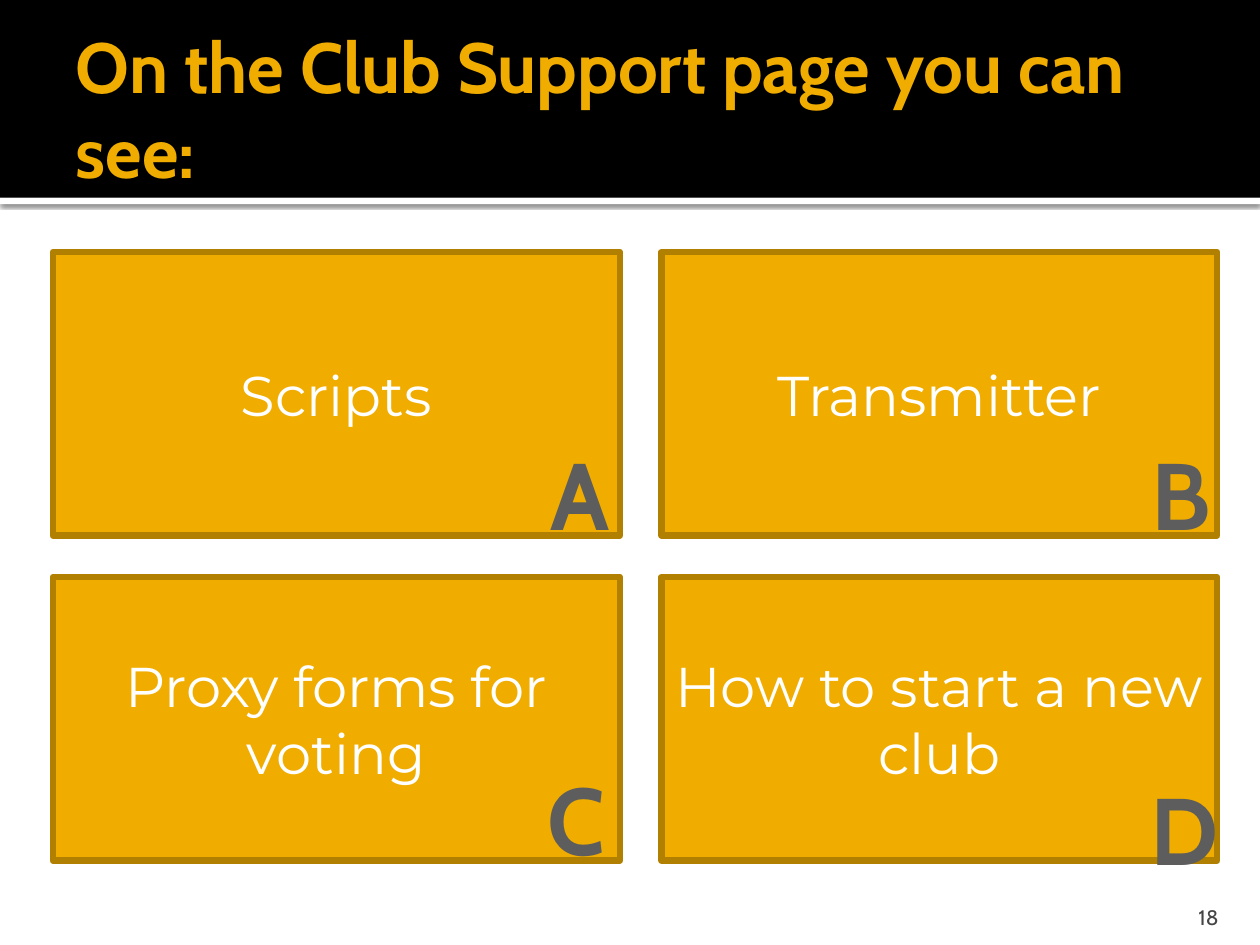
from pptx import Presentation
from pptx.dml.color import RGBColor
from pptx.enum import shapes, text
from pptx.oxml import parse_xml
from pptx.oxml.ns import nsdecls, qn
from pptx.util import Pt

BLACK = RGBColor(0x00, 0x00, 0x00)
WHITE = RGBColor(0xFF, 0xFF, 0xFF)
GOLD = RGBColor(0xF0, 0xAD, 0x00)
DARK_GOLD = RGBColor(0xB2, 0x80, 0x00)
LETTER_GREY = RGBColor(0x5D, 0x5D, 0x5D)
NUMBER_GREY = RGBColor(0x45, 0x45, 0x45)
HEADING_FONT = "Cabin"
BODY_FONT = "Montserrat"
SLIDE_WIDTH, SLIDE_HEIGHT = 720, 540

COLUMNS = ((30.24, 324), (378, 317.5))
ROWS = (144, 329.76)
CARD_HEIGHT = 162
ANSWERS = (
    ("Scripts", "A", 275.76, 101.5, 50.4),
    ("Transmitter", "B", 272.88, 101.5, 48.24),
    ("Proxy forms for voting", "C", 275.76, 101.5, 46.08),
    ("How to start a new club", "D", 272.16, 107.28, 51.84),
)


def add_run(paragraph, words, font, size, color, bold=False):
    run = paragraph.add_run()
    run.text = words
    run.font.name = font
    run.font.size = Pt(size)
    run.font.color.rgb = color
    run.font.bold = bold


def add_rectangle(slide, left, top, width, height, fill):
    rectangle = slide.shapes.add_shape(
        shapes.MSO_SHAPE.RECTANGLE, Pt(left), Pt(top), Pt(width), Pt(height))
    rectangle.shadow.inherit = False
    rectangle.fill.solid()
    rectangle.fill.fore_color.rgb = fill
    rectangle.line.fill.background()
    return rectangle


def add_header(slide, left, top, width, height):
    rule = add_rectangle(slide, left, top + height, width, 3.6, WHITE)
    rule._element.spPr.find(qn("a:effectLst")).append(parse_xml(
        f'<a:outerShdw {nsdecls("a")} blurRad="31750" dist="10160" dir="5400000"'
        ' algn="tl" rotWithShape="0"><a:srgbClr val="000000">'
        '<a:alpha val="60000"/></a:srgbClr></a:outerShdw>'))
    add_rectangle(slide, left, top, width, height, BLACK)

    title = slide.shapes.title
    title._element.getparent().append(title._element)
    title.left, title.top = Pt(left + 36), Pt(top + 12.24)
    title.width, title.height = Pt(width - 72), Pt(98.64)
    frame = title.text_frame
    frame.word_wrap = True
    frame.auto_size = text.MSO_AUTO_SIZE.NONE
    frame.vertical_anchor = text.MSO_ANCHOR.MIDDLE
    frame.margin_left = Pt(7.2)
    frame.margin_right = frame.margin_top = frame.margin_bottom = Pt(3.6)
    heading = frame.paragraphs[0]
    heading.alignment = text.PP_ALIGN.LEFT
    add_run(heading, "On the Club Support page you can see:",
            HEADING_FONT, 40.5, GOLD, True)


def add_card(slide, left, top, width, height, answer):
    card = add_rectangle(slide, left, top, width, height, GOLD)
    card.line.color.rgb = DARK_GOLD
    card.line.width = Pt(3.78)
    card.text_frame.word_wrap = True
    card.text_frame.vertical_anchor = text.MSO_ANCHOR.MIDDLE
    label = card.text_frame.paragraphs[0]
    label.alignment = text.PP_ALIGN.CENTER
    add_run(label, answer, BODY_FONT, 32, WHITE)


def add_letter(slide, left, top, width, letter):
    badge = slide.shapes.add_textbox(Pt(left), Pt(top), Pt(width), Pt(72.72))
    badge.text_frame.word_wrap = False
    badge.text_frame.auto_size = text.MSO_AUTO_SIZE.SHAPE_TO_FIT_TEXT
    paragraph = badge.text_frame.paragraphs[0]
    paragraph.alignment = text.PP_ALIGN.CENTER
    add_run(paragraph, letter, HEADING_FONT, 54, LETTER_GREY, True)


def add_answers(slide):
    cells = [(left, top, width) for top in ROWS for left, width in COLUMNS]
    for (left, top, width), (answer, *_) in zip(cells, ANSWERS):
        add_card(slide, left, top, width, CARD_HEIGHT, answer)
    for (left, top, _), (_, letter, dx, dy, width) in zip(cells, ANSWERS):
        add_letter(slide, left + dx, top + dy, width, letter)


def add_slide_number(slide, left, top, width, height):
    number = slide.shapes.add_textbox(Pt(left), Pt(top), Pt(width), Pt(height))
    frame = number.text_frame
    frame.word_wrap = True
    frame.vertical_anchor = text.MSO_ANCHOR.BOTTOM
    frame.margin_bottom = Pt(0)
    paragraph = frame.paragraphs[0]
    paragraph.alignment = text.PP_ALIGN.RIGHT
    add_run(paragraph, "18", HEADING_FONT, 12, NUMBER_GREY)


def main():
    deck = Presentation()
    deck.slide_width, deck.slide_height = Pt(SLIDE_WIDTH), Pt(SLIDE_HEIGHT)
    slide = deck.slides.add_slide(deck.slide_layouts[5])
    add_header(slide, 0, 0, SLIDE_WIDTH, 113.04)
    add_answers(slide)
    add_slide_number(slide, 645.84, 509.76, 57.6, 21.6)
    deck.save("out.pptx")


if __name__ == "__main__":
    main()
